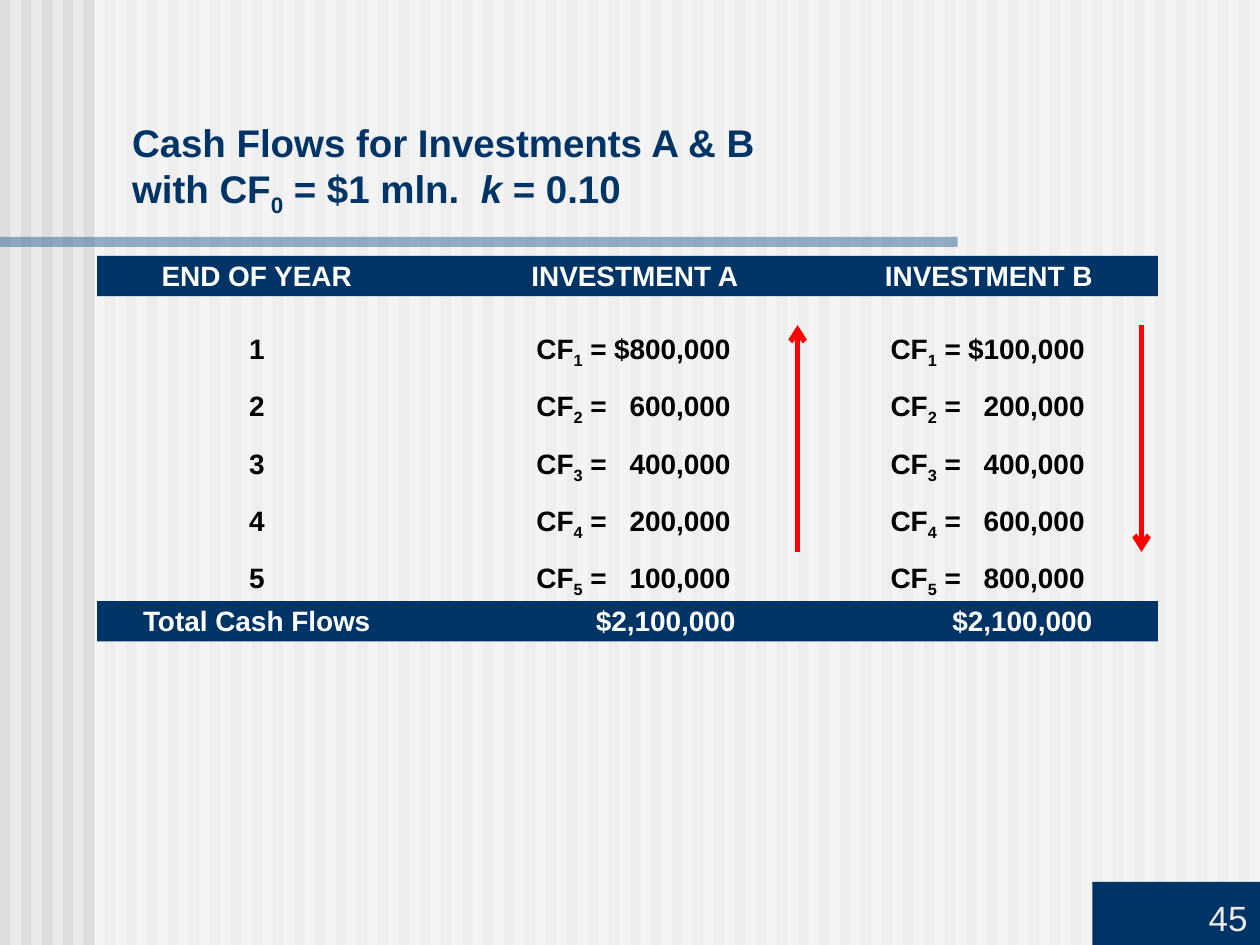
"""Build a slide that compares the cash flows of two investments."""
from dataclasses import dataclass

from lxml.etree import SubElement
from pptx import Presentation
from pptx.dml.color import RGBColor
from pptx.enum.shapes import MSO_CONNECTOR, MSO_SHAPE
from pptx.enum.text import MSO_ANCHOR, PP_ALIGN
from pptx.oxml.ns import qn
from pptx.util import Inches, Pt

NAVY = RGBColor(0x00, 0x33, 0x66)
STEEL = RGBColor(0x33, 0x66, 0x99)
WHITE = RGBColor(0xFF, 0xFF, 0xFF)
BLACK = RGBColor(0x00, 0x00, 0x00)
RED = RGBColor(0xFF, 0x00, 0x00)
PALE = RGBColor(0xEA, 0xEA, 0xEA)
STRIPE = RGBColor(0xDD, 0xDD, 0xDD)

HEADER_TABS = [(1.69, "ctr"), (4.69, "ctr"), (7.5, "ctr")]
TOTAL_TABS = [(1.69, "ctr"), (5.49, "r"), (8.32, "r")]
FLOW_TABS = [(1.69, "ctr"), (3.91, "l"), (5.45, "r"), (6.72, "l"), (8.26, "r")]


@dataclass
class Band:
    top: float
    text: str
    tabs: list


@dataclass
class Flow:
    year: str
    a: str
    b: str


@dataclass
class Arrow:
    x: float
    start: float
    end: float


BANDS = [
    Band(4.77, "\tTotal Cash Flows\t$2,100,000\t$2,100,000", TOTAL_TABS),
    Band(2.03, "\tEND OF YEAR\tINVESTMENT A\tINVESTMENT B", HEADER_TABS),
]
FLOWS = [
    Flow("1", "$800,000", "$100,000"),
    Flow("2", "600,000", "200,000"),
    Flow("3", "400,000", "400,000"),
    Flow("4", "200,000", "600,000"),
    Flow("5", "100,000", "800,000"),
]
ARROWS = [Arrow(6.33, 4.38, 2.58), Arrow(9.06, 2.58, 4.38)]


def add_rect(s, x: float, y: float, w: float, h: float, color: RGBColor, alpha: int = 100):
    """Draw a flat rectangle with an opacity in percent."""
    sp = s.shapes.add_shape(MSO_SHAPE.RECTANGLE, Inches(x), Inches(y), Inches(w), Inches(h))
    sp.shadow.inherit = False
    sp.line.fill.background()
    sp.fill.solid()
    sp.fill.fore_color.rgb = color
    if alpha < 100:
        clr = sp.fill._xPr.find(qn("a:solidFill"))[0]
        SubElement(clr, qn("a:alpha"), val=str(alpha * 1000))
    return sp


def add_text_frame(s, x: float, y: float, w: float, h: float):
    """Add a wrapping text box and return its frame."""
    tf = s.shapes.add_textbox(Inches(x), Inches(y), Inches(w), Inches(h)).text_frame
    tf.word_wrap = True
    return tf


def add_run(p, text: str, color: RGBColor, size: int = 16, bold: bool = True,
            italic: bool = False, sub: bool = False) -> None:
    """Append one formatted run."""
    r = p.add_run()
    r.text = text
    r.font.name = "Arial"
    r.font.size = Pt(size)
    r.font.bold = bold
    r.font.italic = italic
    r.font.color.rgb = color
    if sub:
        r.font._element.set("baseline", "-25000")


def set_tabs(p, tabs: list) -> None:
    """Give a paragraph its tab stops."""
    tab_list = SubElement(p._p.get_or_add_pPr(), qn("a:tabLst"))
    for pos, align in tabs:
        SubElement(tab_list, qn("a:tab"), pos=str(Inches(pos)), algn=align)


def add_background(s) -> None:
    """Draw the striped background and the rule under the title."""
    s.background.fill.solid()
    s.background.fill.fore_color.rgb = PALE
    for i in range(60):
        add_rect(s, i / 6, 0, 1 / 12, 7.5, STRIPE)
    add_rect(s, 0.75, 0, 9.25, 7.5, WHITE, 50)
    add_rect(s, 0, 1.88, 7.6, 0.08, STEEL, 50)


def add_page_number(s, number: str) -> None:
    """Draw the page number block."""
    tf = add_rect(s, 8.67, 7, 1.33, 0.5, NAVY).text_frame
    tf.vertical_anchor = MSO_ANCHOR.BOTTOM
    p = tf.paragraphs[0]
    p.alignment = PP_ALIGN.RIGHT
    add_run(p, number, PALE, 20, bold=False)


def add_title(s) -> None:
    """Write the two-line title."""
    tf = add_text_frame(s, 0.95, 0.41, 8.93, 1.37)
    tf.vertical_anchor = MSO_ANCHOR.BOTTOM
    p = tf.paragraphs[0]
    add_run(p, "Cash Flows for Investments A & B", NAVY, 22)
    p.add_line_break()
    add_run(p, "with CF", NAVY, 22)
    add_run(p, "0", NAVY, 22, sub=True)
    add_run(p, " = $1 mln.  ", NAVY, 22)
    add_run(p, "k", NAVY, 22, italic=True)
    add_run(p, " = 0.10", NAVY, 22)


def add_band(s, band: Band) -> None:
    """Draw a dark band with tabbed text."""
    add_rect(s, 0.77, band.top, 8.42, 0.32, NAVY)
    p = add_text_frame(s, 0.25, band.top - 0.03, 9.43, 0.37).paragraphs[0]
    set_tabs(p, band.tabs)
    add_run(p, band.text, WHITE)


def add_flows(s, flows: list[Flow]) -> None:
    """Write one line of cash flows for each year."""
    tf = add_text_frame(s, 0.25, 2.43, 9.43, 2.11)
    for i, flow in enumerate(flows):
        p = tf.add_paragraph() if i else tf.paragraphs[0]
        p.line_spacing = 1.5
        set_tabs(p, FLOW_TABS)
        add_run(p, f"\t{flow.year}", BLACK)
        for amount in (flow.a, flow.b):
            add_run(p, "\tCF", BLACK)
            add_run(p, flow.year, BLACK, sub=True)
            add_run(p, f" =\t{amount}", BLACK)


def add_arrow(s, arrow: Arrow) -> None:
    """Draw a vertical arrow."""
    line = s.shapes.add_connector(MSO_CONNECTOR.STRAIGHT, Inches(arrow.x), Inches(arrow.start),
                                  Inches(arrow.x), Inches(arrow.end))
    line.line.color.rgb = RED
    line.line.width = Pt(3)
    SubElement(line.line._get_or_add_ln(), qn("a:tailEnd"), type="arrow")
    SubElement(line._element.spPr, qn("a:effectLst"))


def main() -> None:
    """Build and save the slide."""
    prs = Presentation()
    prs.slide_width, prs.slide_height = Inches(10), Inches(7.5)
    s = prs.slides.add_slide(prs.slide_layouts[6])
    add_background(s)
    add_page_number(s, "45")
    for band in BANDS:
        add_band(s, band)
    add_flows(s, FLOWS)
    add_title(s)
    for arrow in ARROWS:
        add_arrow(s, arrow)
    prs.save("out.pptx")


if __name__ == "__main__":
    main()
